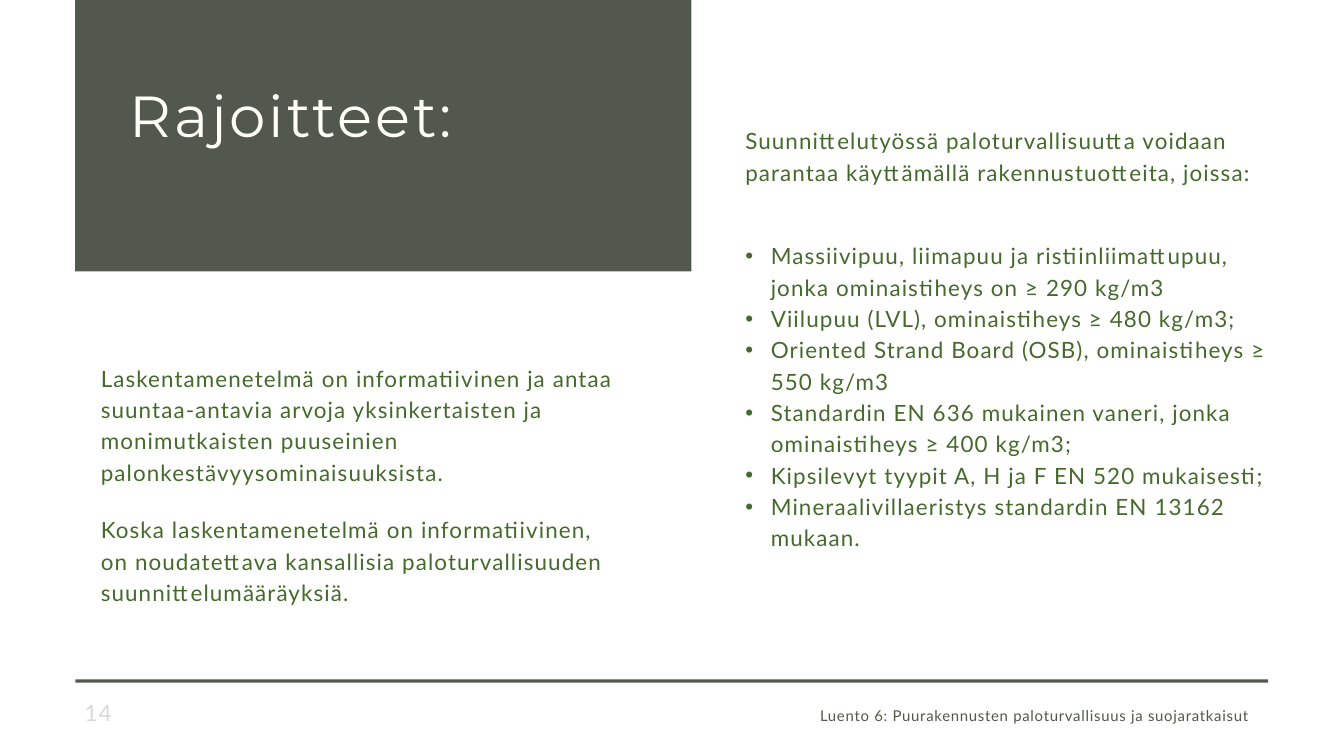
from pptx import Presentation
from pptx.dml.color import RGBColor
from pptx.enum.shapes import MSO_SHAPE
from pptx.enum.text import MSO_ANCHOR, PP_ALIGN
from pptx.oxml.xmlchemy import OxmlElement
from pptx.util import Inches, Pt

RECTANGLE = MSO_SHAPE.RECTANGLE
TOP, MIDDLE = MSO_ANCHOR.TOP, MSO_ANCHOR.MIDDLE
LEFT, RIGHT = PP_ALIGN.LEFT, PP_ALIGN.RIGHT

COLORS = {
    "panel": "52584D",
    "title": "FEFFF8",
    "body": "456A2C",
    "number": "D9D9D9",
}
BULLET_INDENT = Inches(0.38)

RULES = [
    "Laskentamenetelmä on informatiivinen ja antaa suuntaa-antavia arvoja yksinkertaisten ja "
    "monimutkaisten puuseinien palonkestävyysominaisuuksista.",
    "Koska laskentamenetelmä on informatiivinen, on noudatettava kansallisia "
    "paloturvallisuuden suunnittelumääräyksiä.",
]
PRODUCTS_INTRO = (
    "Suunnittelutyössä paloturvallisuutta voidaan parantaa käyttämällä "
    "rakennustuotteita, joissa:"
)
PRODUCTS = [
    "Massiivipuu, liimapuu ja ristiinliimattupuu, jonka ominaistiheys on ≥ 290 kg/m3",
    "Viilupuu (LVL), ominaistiheys ≥ 480 kg/m3;",
    "Oriented Strand Board (OSB), ominaistiheys ≥ 550 kg/m3",
    "Standardin EN 636 mukainen vaneri, jonka ominaistiheys ≥ 400 kg/m3;",
    "Kipsilevyt tyypit A, H ja F EN 520 mukaisesti;",
    "Mineraalivillaeristys standardin EN 13162 mukaan.",
]


def add_bullet(paragraph):
    properties = paragraph._p.get_or_add_pPr()
    properties.set("marL", str(BULLET_INDENT))
    properties.set("indent", str(-BULLET_INDENT))
    font = OxmlElement("a:buFont")
    font.set("typeface", "Arial")
    character = OxmlElement("a:buChar")
    character.set("char", "•")
    properties.extend([font, character])


def add_text(slide, box, paragraphs, size=24, color="body", font="Lato", line=33.6,
             spacing=1.2, align=LEFT, anchor=TOP, bullets=False):
    text_box = slide.shapes.add_textbox(*map(Inches, box))
    frame = text_box.text_frame
    frame.word_wrap = True
    frame.vertical_anchor = anchor
    frame.margin_left = frame.margin_right = 0
    frame.margin_top = frame.margin_bottom = 0
    for index, text in enumerate(paragraphs):
        paragraph = frame.paragraphs[0] if index == 0 else frame.add_paragraph()
        paragraph.alignment = align
        paragraph.line_spacing = Pt(line)
        if bullets:
            add_bullet(paragraph)
        run = paragraph.add_run()
        run.text = text
        run.font.name = font
        run.font.size = Pt(size)
        run.font.color.rgb = RGBColor.from_string(COLORS[color])
        run._r.get_or_add_rPr().set("spc", str(round(spacing * 100)))


def add_panel(slide, box):
    shape = slide.shapes.add_shape(RECTANGLE, *map(Inches, box))
    shape.shadow.inherit = False
    shape.fill.solid()
    shape.fill.fore_color.rgb = RGBColor.from_string(COLORS["panel"])
    shape.line.fill.background()


def add_title(slide, left, top, width, height):
    add_panel(slide, (left, top, width, height))
    add_text(slide, (left + 0.81, top + 1.05, width - 1.61, 1.11), ["Rajoitteet:"],
             size=62, color="title", font="Montserrat", line=83.7, spacing=3.1)


def add_rules(slide, left, top, width, height):
    first, second = RULES
    second_height = 1.4
    add_text(slide, (left, top, width, 1.87), [first])
    add_text(slide, (left, top + height - second_height, width, second_height), [second])


def add_products(slide, left, top, width, height):
    list_offset = 1.71
    add_text(slide, (left, top, width, 0.92), [PRODUCTS_INTRO])
    add_text(slide, (left, top + list_offset, width, height - list_offset), PRODUCTS,
             bullets=True)


def add_footer(slide, left, top, width, height):
    add_panel(slide, (left, top, width, 0.05))
    add_text(slide, (left + 0.14, top + 0.3, 2.13, 0.4), ["14"],
             color="number", line=28.8, anchor=MIDDLE)
    add_text(slide, (left + 9.15, top + height - 0.29, 8.32, 0.29),
             ["Luento 6: Puurakennusten paloturvallisuus ja suojaratkaisut"],
             size=16, color="panel", line=22.4, spacing=0.8, align=RIGHT)


def main():
    presentation = Presentation()
    presentation.slide_width = Inches(20)
    presentation.slide_height = Inches(11.25)
    slide = presentation.slides.add_slide(presentation.slide_layouts[6])
    add_products(slide, 11.09, 1.83, 7.78, 6.44)
    add_title(slide, 1.12, 0, 9.17, 4.04)
    add_rules(slide, 1.5, 5.36, 7.78, 3.66)
    add_footer(slide, 1.12, 10.11, 17.75, 0.65)
    presentation.save("out.pptx")


if __name__ == "__main__":
    main()
